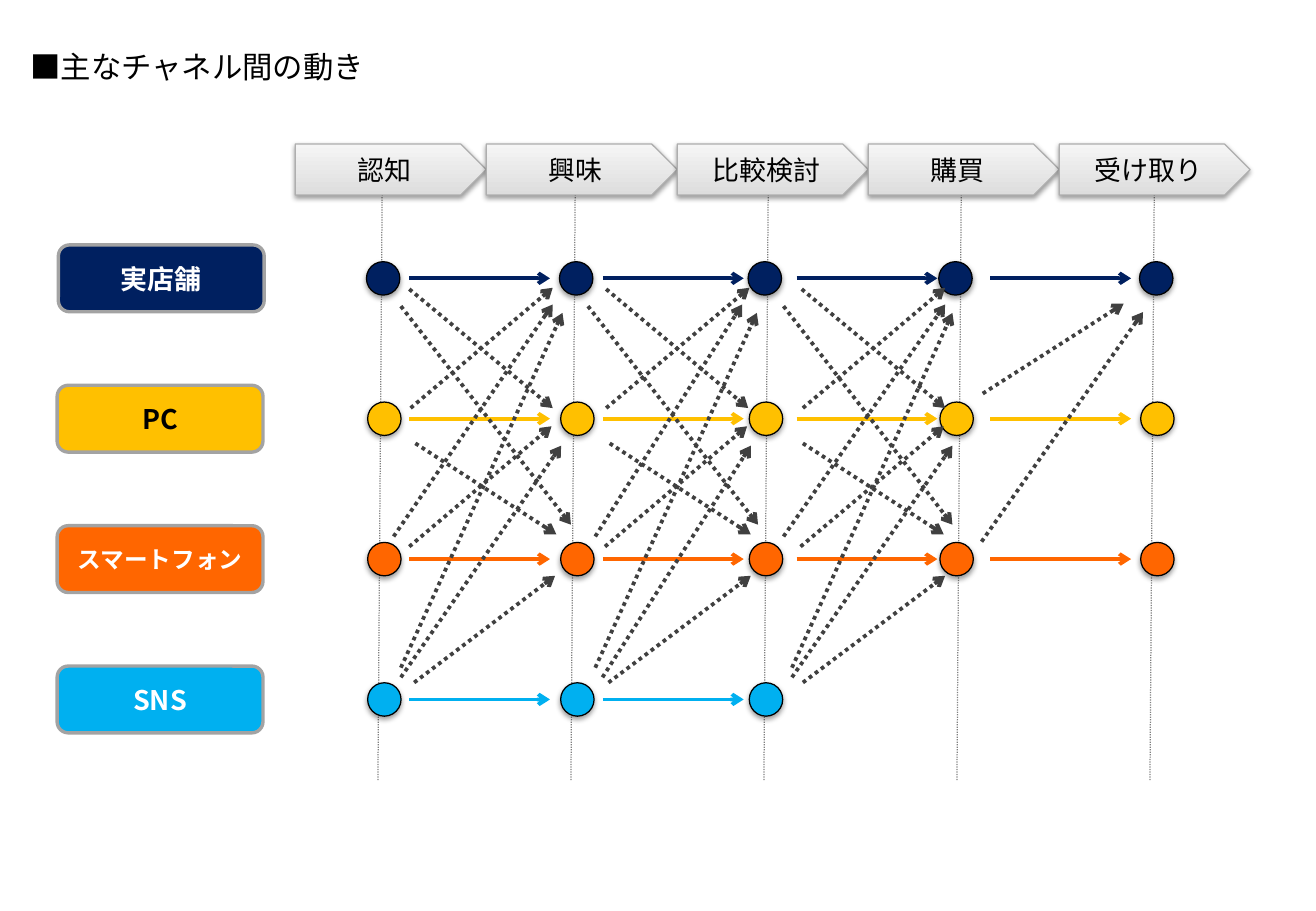
from lxml import etree
from pptx import Presentation
from pptx.dml.color import RGBColor
from pptx.enum import dml, shapes, text
from pptx.oxml import ns
from pptx.util import Pt

FONT = "Noto Sans CJK JP"
BLACK = RGBColor(0x00, 0x00, 0x00)
WHITE = RGBColor(0xFF, 0xFF, 0xFF)
NAVY = RGBColor(0x00, 0x20, 0x60)
YELLOW = RGBColor(0xFF, 0xC0, 0x00)
ORANGE = RGBColor(0xFF, 0x66, 0x00)
SKY = RGBColor(0x00, 0xB0, 0xF0)
GUIDE_GRAY = RGBColor(0x80, 0x80, 0x80)
MOVE_GRAY = RGBColor(0x40, 0x40, 0x40)
LABEL_EDGE = RGBColor(0xA3, 0xA3, 0xA3)
STAGE_EDGE = RGBColor(0xAE, 0xAE, 0xAE)
STAGE_DARK = RGBColor(0xDD, 0xDD, 0xDD)
STAGE_LIGHT = RGBColor(0xF5, 0xF5, 0xF5)

STAGES = ["認知", "興味", "比較検討", "購買", "受け取り"]
STAGE_LEFT, STAGE_STEP = 175, 113.2
GUIDE_LEFT, GUIDE_STEP = 226.6, 114.4
FLOW_LEFT, FLOW_STEP, FLOW_LENGTH = 242.6, 114.8, 83.4
ROW_TOP, ROW_STEP = 165, 83.2
DOT_CENTERS = [227.8, 342.2, 454, 567, 686]
DOT_SIZE = 19.8
LABEL_WIDTH, LABEL_HEIGHT = 122, 39.6

# Channel name, colour, text colour, text size, number of stages reached
CHANNELS = [
    ("実店舗", NAVY, WHITE, 16, 5),
    ("PC", YELLOW, BLACK, 16, 5),
    ("スマートフォン", ORANGE, WHITE, 14, 5),
    ("SNS", SKY, WHITE, 16, 3),
]

# Moves between channels: start xs, end xs, start y, end y
MOVES = [
    # 実店舗 to PC and スマートフォン
    ([242.6, 359.3, 475.2], [327.6, 443.5, 560.2], 171.4, 241.9),
    ([237.6, 348.5, 464.4], [338.4, 449.3, 564.5], 181.5, 311),
    # PC to スマートフォン and 実店舗
    ([246.2, 361.4, 475.9], [329.8, 445, 559.4], 262.8, 316.8),
    ([243.4, 359.3, 475.9], [327.6, 444.2, 560.2], 241.9, 170.6),
    # スマートフォン to PC and 実店舗
    ([242.6, 358.6, 474.5], [326.9, 442.8, 559.4], 324, 252.7),
    ([233.3, 352.8, 464.4], [327.6, 439.9, 560.2], 318, 180.5),
    # SNS to スマートフォン, PC and 実店舗
    ([245.5, 360.7, 475.9], [329, 445, 560.2], 404.6, 341.3),
    ([237.6, 357.1, 469.4], [332.6, 445, 564.5], 401.5, 264.2),
    ([237.6, 352.8, 469.4], [333.4, 448.6, 564.5], 395.8, 185.5),
    # PC and スマートフォン to pick-up in 実店舗
    ([582.5], [666], 233.3, 180),
    ([581.8], [677.5], 321.1, 185),
]


def write(shape, words, size=16, color=BLACK, bold=False,
          align=text.PP_ALIGN.CENTER, anchor=text.MSO_ANCHOR.MIDDLE):
    frame = shape.text_frame
    frame.word_wrap = True
    frame.auto_size = text.MSO_AUTO_SIZE.NONE
    frame.vertical_anchor = anchor
    paragraph = frame.paragraphs[0]
    paragraph.alignment = align
    run = paragraph.add_run()
    run.text = words
    font = run.font
    font.size, font.bold, font.name = Pt(size), bold, FONT
    font.color.rgb = color
    east_asian = etree.SubElement(run._r.get_or_add_rPr(), ns.qn("a:ea"))
    east_asian.set("typeface", FONT)


def add_block(slide, kind, left, top, width, height, edge, edge_width, fill=None):
    block = slide.shapes.add_shape(kind, Pt(left), Pt(top), Pt(width), Pt(height))
    block.shadow.inherit = False
    if fill is not None:
        block.fill.solid()
        block.fill.fore_color.rgb = fill
    block.line.color.rgb = edge
    block.line.width = Pt(edge_width)
    return block


def add_shadow(block):
    effects = block._element.spPr.find(ns.qn("a:effectLst"))
    shadow = etree.SubElement(effects, ns.qn("a:outerShdw"), blurRad=str(Pt(3.1)),
                              dist=str(Pt(1.6)), dir="5400000", rotWithShape="0")
    color = etree.SubElement(shadow, ns.qn("a:srgbClr"), val=str(BLACK))
    etree.SubElement(color, ns.qn("a:alpha"), val="38000")


def add_line(slide, x1, y1, x2, y2, color, width=2.25, dotted=False, arrow=True):
    line = slide.shapes.add_connector(
        shapes.MSO_CONNECTOR.STRAIGHT, Pt(x1), Pt(y1), Pt(x2), Pt(y2))
    line.line.color.rgb = color
    line.line.width = Pt(width)
    if dotted:
        line.line.dash_style = dml.MSO_LINE.ROUND_DOT
    if arrow:
        etree.SubElement(line.line._get_or_add_ln(), ns.qn("a:tailEnd"), type="arrow")
    etree.SubElement(line._element.spPr, ns.qn("a:effectLst"))


def add_title(slide, words):
    title = slide.shapes.title
    title.left, title.top = Pt(10.8), Pt(25.2)
    title.width, title.height = Pt(248.4), Pt(28.8)
    write(title, words, size=18, align=text.PP_ALIGN.LEFT, anchor=text.MSO_ANCHOR.TOP)


def add_stage(slide, index, name):
    stage = add_block(slide, shapes.MSO_SHAPE.PENTAGON, STAGE_LEFT + index * STAGE_STEP,
                      85.4, 113.2, 30.2, STAGE_EDGE, 0.75)
    stage.fill.gradient()
    stage.fill.gradient_angle = 90
    for stop, color in zip(stage.fill.gradient_stops, [STAGE_DARK, STAGE_LIGHT]):
        stop.color.rgb = color
    add_shadow(stage)
    write(stage, name)


def add_channel(slide, row, name, color, text_color, size, reach):
    middle = ROW_TOP + row * ROW_STEP
    shift = 0 if row else -0.7
    label_left = 33.9 - shift
    label = add_block(slide, shapes.MSO_SHAPE.ROUNDED_RECTANGLE, label_left,
                      middle - LABEL_HEIGHT / 2, LABEL_WIDTH, LABEL_HEIGHT,
                      LABEL_EDGE, 2, color)
    write(label, name, size=size, color=text_color, bold=True)
    for center in DOT_CENTERS[:reach]:
        dot = add_block(slide, shapes.MSO_SHAPE.OVAL, center + shift - DOT_SIZE / 2,
                        middle - DOT_SIZE / 2, DOT_SIZE, DOT_SIZE, BLACK, 0.75, color)
        add_shadow(dot)


def add_flow(slide, row, color, reach):
    middle = ROW_TOP + row * ROW_STEP
    for index in range(reach - 1):
        start = FLOW_LEFT + index * FLOW_STEP
        add_line(slide, start, middle, start + FLOW_LENGTH, middle, color)


def main():
    deck = Presentation()
    deck.slide_width, deck.slide_height = Pt(780), Pt(540)
    slide = deck.slides.add_slide(deck.slide_layouts[5])
    add_title(slide, "■主なチャネル間の動き")

    # Stage guides
    for index in range(len(STAGES)):
        x = GUIDE_LEFT + index * GUIDE_STEP
        add_line(slide, x, 105, x - 2.6, 463, GUIDE_GRAY, 0.75, dotted=True, arrow=False)

    # Channels and the flow within each
    for row, channel in enumerate(CHANNELS):
        add_channel(slide, row, *channel)
    for row, (_, color, _, _, reach) in enumerate(CHANNELS):
        add_flow(slide, row, color, reach)

    # Moves between channels
    for starts, ends, start_y, end_y in MOVES:
        for start, end in zip(starts, ends):
            add_line(slide, start, start_y, end, end_y, MOVE_GRAY, dotted=True)

    # Stage headings
    for index, name in enumerate(STAGES):
        add_stage(slide, index, name)

    deck.save("out.pptx")


if __name__ == "__main__":
    main()
